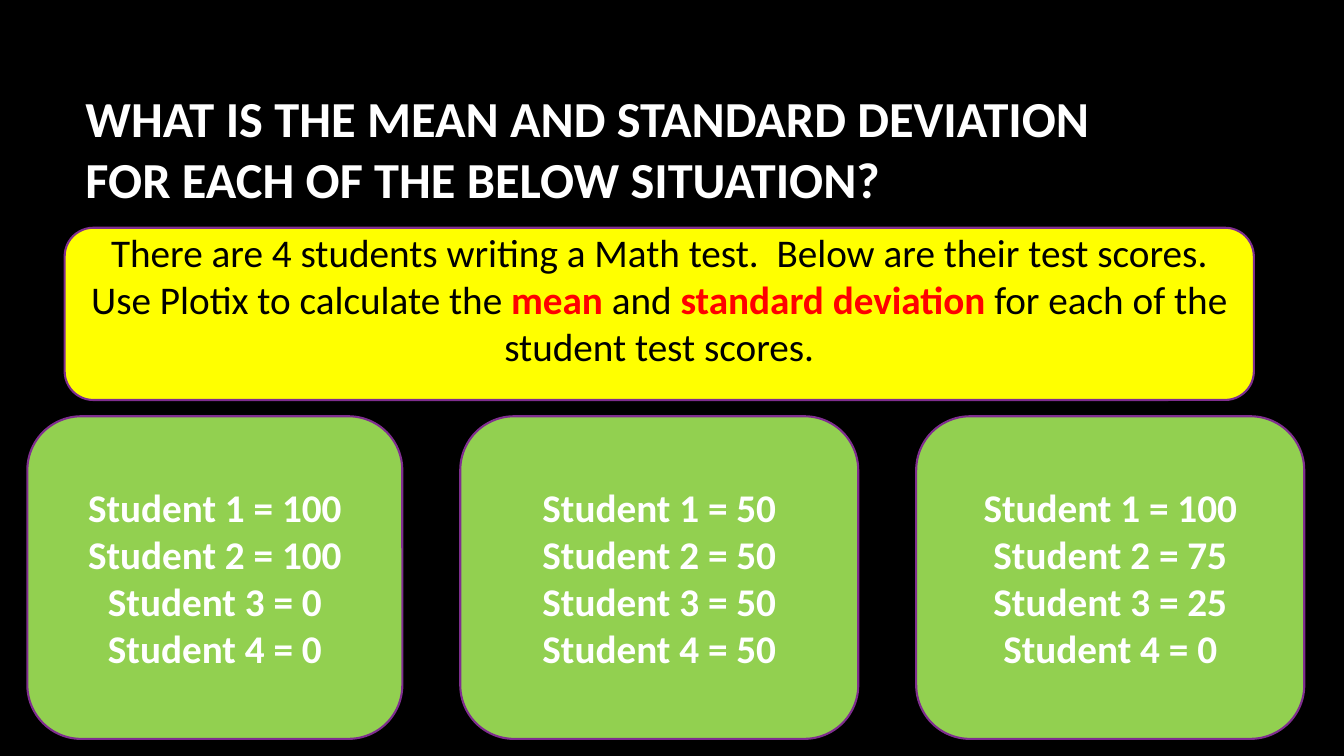
from pptx import Presentation
from pptx.dml.color import RGBColor
from pptx.enum import shapes, text
from pptx.util import Cm, Pt

BLACK = RGBColor(0x00, 0x00, 0x00)
WHITE = RGBColor(0xFF, 0xFF, 0xFF)
RED = RGBColor(0xFF, 0x00, 0x00)
YELLOW = RGBColor(0xFF, 0xFF, 0x00)
GREEN = RGBColor(0x92, 0xD0, 0x50)
PURPLE = RGBColor(0x7F, 0x2E, 0x8F)


def set_font(font, size, color, bold):
    font.name = "Calibri"
    font.size = Pt(size)
    font.color.rgb = color
    font.bold = bold


def add_card(left, top, width, height, fill):
    """Add a rounded, purple-edged box to the page; lengths are in cm."""
    card = page.shapes.add_shape(shapes.MSO_SHAPE.ROUNDED_RECTANGLE,
                                 Cm(left), Cm(top), Cm(width), Cm(height))
    card.shadow.inherit = False
    card.fill.solid()
    card.fill.fore_color.rgb = fill
    card.line.color.rgb = PURPLE
    card.line.width = Pt(1.5)
    card.text_frame.word_wrap = True
    card.text_frame.vertical_anchor = text.MSO_ANCHOR.MIDDLE
    return card


deck = Presentation()
deck.slide_width = Cm(33.87)
deck.slide_height = Cm(19.05)
page = deck.slides.add_slide(deck.slide_layouts[5])
page.background.fill.solid()
page.background.fill.fore_color.rgb = BLACK

# Title
title = page.shapes.title
title.left, title.top, title.width, title.height = Cm(1.9), Cm(1.7), Cm(28.15), Cm(4.04)
title.text_frame.text = "WHAT IS THE MEAN AND STANDARD DEVIATION FOR EACH OF THE BELOW SITUATION?"
title.text_frame.word_wrap = True
title.text_frame.margin_right = Cm(1)
title.text_frame.vertical_anchor = text.MSO_ANCHOR.MIDDLE
heading = title.text_frame.paragraphs[0]
heading.alignment = text.PP_ALIGN.LEFT
set_font(heading.font, 36, WHITE, True)

# Task
task = add_card(1.63, 5.74, 29.97, 4.34, YELLOW)
task.text_frame.margin_top = 0
task.text_frame.margin_bottom = Cm(0.77)
para = task.text_frame.paragraphs[0]
para.alignment = text.PP_ALIGN.CENTER
for words, is_key in [
    ("There are 4 students writing a Math test.  Below are their test scores. "
     "Use Plotix to calculate the ", False),
    ("mean", True),
    (" and ", False),
    ("standard deviation ", True),
    ("for each of the student test scores.", False),
]:
    span = para.add_run()
    span.text = words
    set_font(span.font, 28, RED if is_key else BLACK, is_key)

# Score cards: left, width, scores of students 1 to 4
for left, width, scores in [
    (0.69, 9.45, (100, 100, 0, 0)),
    (11.6, 10.03, (50, 50, 50, 50)),
    (23.09, 9.78, (100, 75, 25, 0)),
]:
    card = add_card(left, 10.49, width, 8.13, GREEN)
    card.text_frame.text = "\n".join(
        f"Student {number} = {score}" for number, score in enumerate(scores, 1))
    for para in card.text_frame.paragraphs:
        para.alignment = text.PP_ALIGN.CENTER
        set_font(para.font, 28, WHITE, True)

deck.save("out.pptx")
